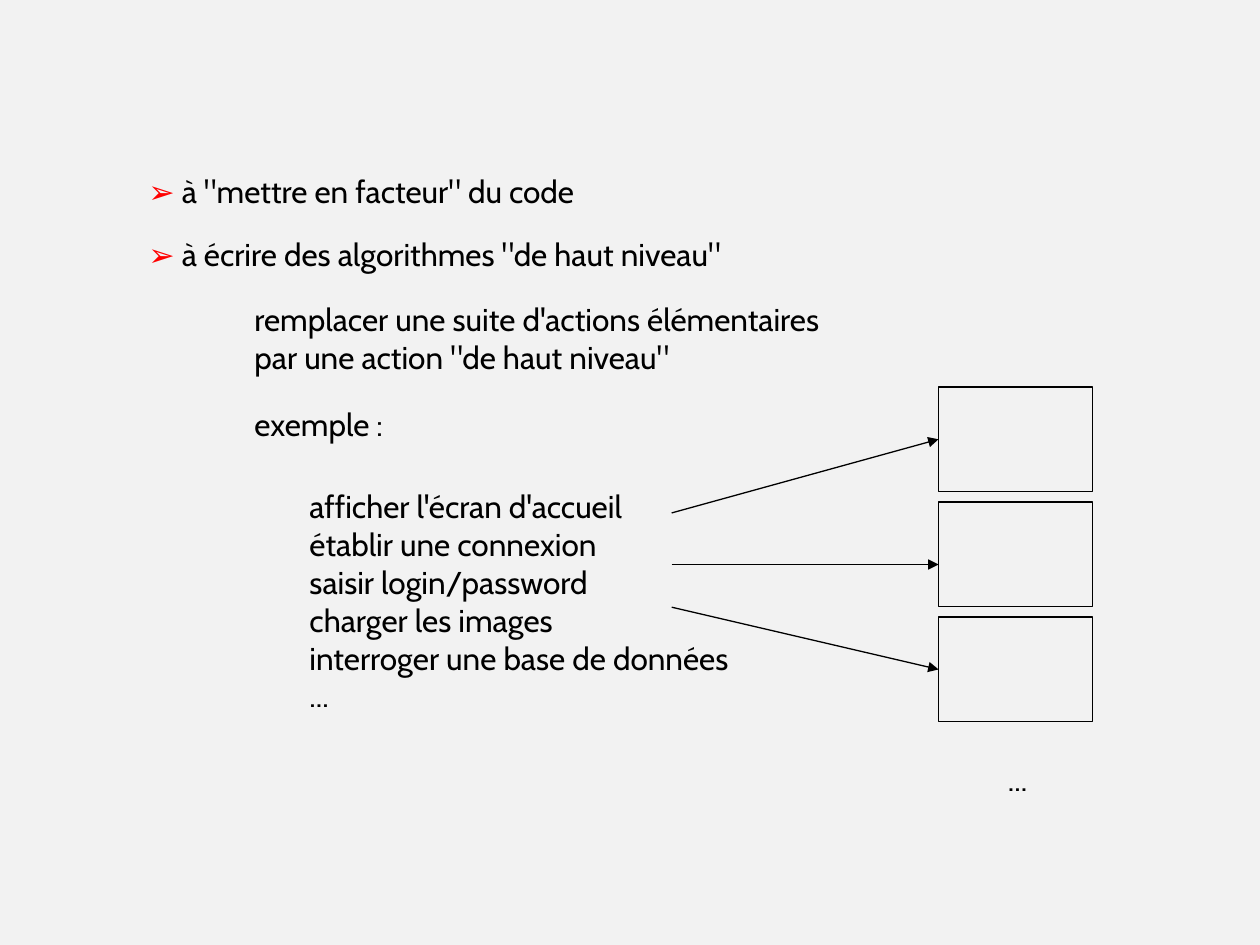
from pptx import Presentation
from pptx.dml.color import RGBColor
from pptx.enum.shapes import MSO_CONNECTOR, MSO_SHAPE
from pptx.oxml.ns import qn
from pptx.util import Cm, Pt
from lxml.etree import SubElement

BLACK = RGBColor(0x00, 0x00, 0x00)
RED = RGBColor(0xFF, 0x00, 0x00)
LIGHT_GREY = RGBColor(0xF2, 0xF2, 0xF2)

LEFT_SIDE = 1
BULLET = "➢ "


class PageBuilder:
    """Holds the style and the current slide."""

    font_format = {"name": "Cabin", "size": Pt(18)}
    line_width = Pt(0.75)

    def __init__(self, page):
        self.page = page
        fill = page.background.fill
        fill.solid()
        fill.fore_color.rgb = LIGHT_GREY

    def add_span(self, para, text, color=BLACK):
        span = para.add_run()
        span.text = text
        for key, value in self.font_format.items():
            setattr(span.font, key, value)
        span.font.color.rgb = color

    def add_text(self, left, top, width, height, lines, bullet=None):
        box = self.page.shapes.add_textbox(Cm(left), Cm(top), Cm(width), Cm(height))
        frame = box.text_frame
        frame.word_wrap = True
        for index, line in enumerate(lines):
            para = frame.add_paragraph() if index else frame.paragraphs[0]
            if bullet:
                self.add_span(para, bullet, RED)
            self.add_span(para, line)

    def add_outline(self, shape):
        shape.line.color.rgb = BLACK
        shape.line.width = self.line_width

    def add_box(self, left, top, width, height):
        box = self.page.shapes.add_shape(
            MSO_SHAPE.RECTANGLE, Cm(left), Cm(top), Cm(width), Cm(height))
        box.shadow.inherit = False
        box.fill.background()
        self.add_outline(box)
        return box

    def add_arrow(self, start, end, target=None):
        arrow = self.page.shapes.add_connector(
            MSO_CONNECTOR.STRAIGHT, *(Cm(value) for value in (*start, *end)))
        if target is not None:
            arrow.end_connect(target, LEFT_SIDE)
        self.add_outline(arrow)
        SubElement(arrow.line._get_or_add_ln(), qn("a:tailEnd"), type="triangle")
        SubElement(arrow._element.spPr, qn("a:effectLst"))


def main():
    deck = Presentation()
    deck.slide_width, deck.slide_height = Cm(25.4), Cm(19.05)
    builder = PageBuilder(deck.slides.add_slide(deck.slide_layouts[6]))

    # Main points
    builder.add_text(2.74, 3.35, 9.47, 1.09,
                     ['à "mettre en facteur" du code'], BULLET)
    builder.add_text(2.74, 4.62, 12.8, 1.09,
                     ['à écrire des algorithmes "de haut niveau"'], BULLET)

    # Explanation and example
    builder.add_text(4.88, 8.05, 3.45, 1.09, ["exemple :"])
    builder.add_text(4.88, 5.92, 12.57, 1.96, [
        "remplacer une suite d'actions élémentaires",
        'par une action "de haut niveau"',
    ])
    builder.add_text(5.99, 9.7, 9.25, 5.33, [
        "afficher l'écran d'accueil",
        "établir une connexion",
        "saisir login/password",
        "charger les images",
        "interroger une base de données",
        "...",
    ])

    # Column of code boxes
    box_left, box_top, box_pitch = 18.92, 7.8, 2.32
    boxes = [builder.add_box(box_left, box_top + row * box_pitch, 3.1, 2.11)
             for row in range(3)]
    builder.add_text(20.07, 15.19, 1.04, 1.09, ["..."])

    # Arrows from the actions; the middle one stays level, below its box's centre
    arrow_left, level = 13.54, 11.38
    builder.add_arrow((arrow_left, 10.34), (box_left, 8.85), boxes[0])
    builder.add_arrow((arrow_left, level), (box_left, level))
    builder.add_arrow((arrow_left, 12.24), (box_left, 13.5), boxes[2])

    deck.save("out.pptx")


if __name__ == "__main__":
    main()
